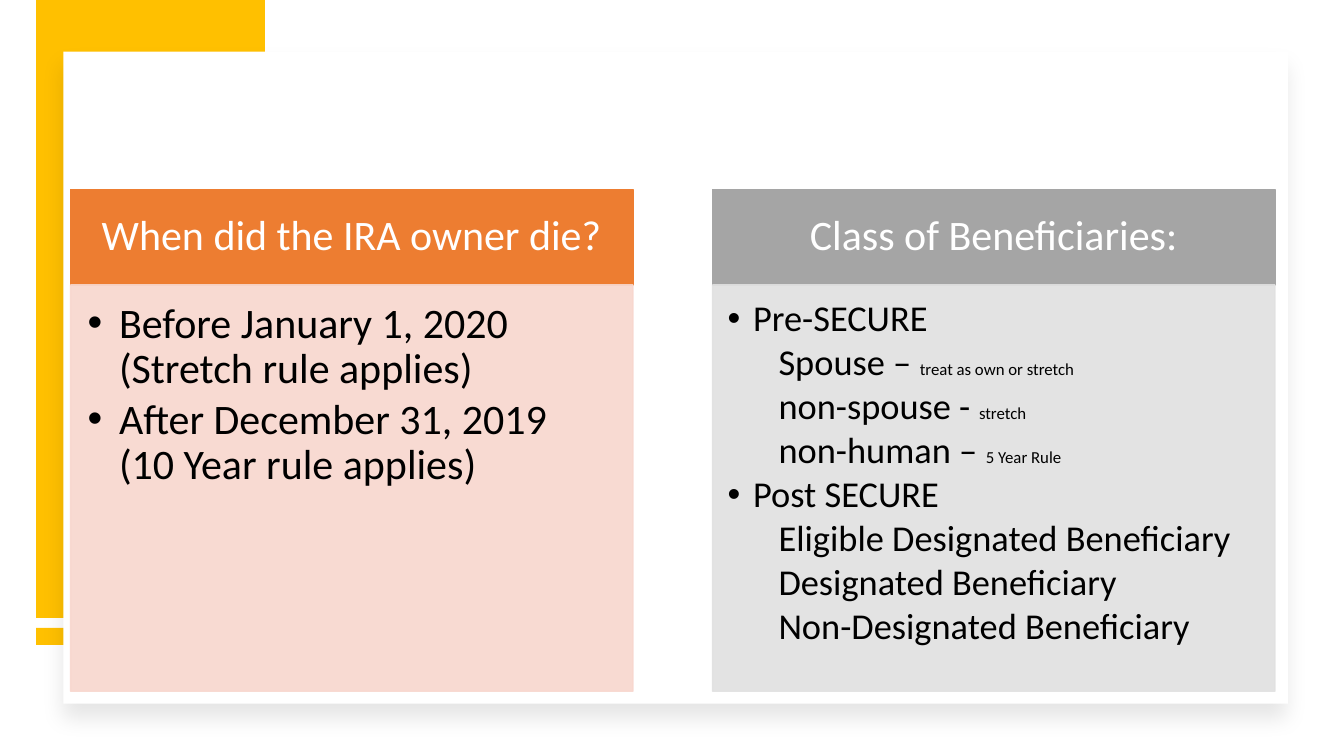
"""Builds the slide on inherited IRA rules and classes of beneficiaries."""
from lxml.etree import SubElement
from pptx import Presentation
from pptx.dml.color import RGBColor
from pptx.enum.shapes import MSO_SHAPE as Shape
from pptx.enum.text import MSO_ANCHOR as Anchor, PP_ALIGN as Align
from pptx.oxml.ns import qn
from pptx.util import Cm, Pt

FONT = "Calibri"
YELLOW, WHITE, BLACK = "FFC000", "FFFFFF", "000000"
ACCENTS = [(0.91, 15.82, 5.77, 0.43), (0.91, 0, 5.77, 15.57)]
CARD = (1.6, 1.3, 30.86, 16.43)
COLUMNS = [
    {
        "heading": "When did the IRA owner die?", "dark": "ED7D31", "light": "F8D7CE",
        "size": 30, "hang": 0.79, "insets": (0.43, 0.43, 0.58, 0.66),
        "items": [
            (1, "Before January 1, 2020 (Stretch rule applies)", ""),
            (1, "After December 31, 2019 (10 Year rule applies)", ""),
        ],
    },
    {
        "heading": "Class of Beneficiaries:", "dark": "A5A5A5", "light": "E1E1E1",
        "size": 26, "hang": 0.64, "insets": (0.38, 0.38, 0.51, 0.58),
        "items": [
            (1, "Pre-SECURE", ""),
            (2, "Spouse – ", "treat as own or stretch"),
            (2, "non-spouse - ", "stretch"),
            (2, "non-human – ", "5 Year Rule"),
            (1, "Post SECURE", ""),
            (2, "Eligible Designated Beneficiary", ""),
            (2, "Designated Beneficiary", ""),
            (2, "Non-Designated Beneficiary", ""),
        ],
    },
]
COLUMN_LEFT, COLUMN_PITCH, COLUMN_WIDTH = 1.78, 16.18, 14.17
HEADING_TOP, HEADING_HEIGHT, BODY_HEIGHT = 4.78, 2.4, 10.24
HEADING_INSETS = (0.58, 0.33, 0.58, 0.33)
HEADING_SIZE, NOTE_SIZE = 30, 12


def color(hex_code):
    return RGBColor.from_string(hex_code)


def add_box(slide, place, fill, outlined=False, opacity=100):
    box = slide.shapes.add_shape(Shape.RECTANGLE, *map(Cm, place))
    box.shadow.inherit = False
    box.fill.solid()
    box.fill.fore_color.rgb = color(fill)
    if outlined:
        box.line.color.rgb = color(fill)
        box.line.width = Pt(1)
    else:
        box.line.fill.background()
    if opacity < 100:
        for tint in list(box._element.spPr.iter(qn("a:srgbClr"))):
            SubElement(tint, qn("a:alpha"), val=str(opacity * 1000))
    return box


def add_shadow(box):
    effects = box._element.spPr.find(qn("a:effectLst"))
    shadow = SubElement(effects, qn("a:outerShdw"), blurRad=str(Pt(15)), dist=str(Pt(11)),
                        dir="5400000", algn="t", rotWithShape="0")
    tint = SubElement(shadow, qn("a:srgbClr"), val=BLACK)
    SubElement(tint, qn("a:alpha"), val="10000")


def set_frame(box, insets, anchor):
    frame = box.text_frame
    frame.word_wrap = True
    frame.vertical_anchor = anchor
    (frame.margin_left, frame.margin_top,
     frame.margin_right, frame.margin_bottom) = map(Cm, insets)
    return frame


def add_text(paragraph, text, size, ink):
    run = paragraph.add_run()
    run.text = text
    run.font.name = FONT
    run.font.size = Pt(size)
    run.font.color.rgb = color(ink)


def format_item(paragraph, level, size, hang):
    paragraph.alignment = Align.LEFT
    paragraph.line_spacing = 0.9
    paragraph.space_after = Pt(round(size * 0.13, 1))
    settings = paragraph._p.get_or_add_pPr()
    settings.set("marL", str(Cm(hang * level)))
    if level == 1:
        settings.set("indent", str(-Cm(hang)))
        SubElement(settings, qn("a:buFont"), typeface="Arial")
        SubElement(settings, qn("a:buChar"), char="•")


def add_column(slide, left, column):
    heading_box = add_box(slide, (left, HEADING_TOP, COLUMN_WIDTH, HEADING_HEIGHT),
                          column["dark"], outlined=True)
    heading = set_frame(heading_box, HEADING_INSETS, Anchor.MIDDLE).paragraphs[0]
    heading.alignment = Align.CENTER
    heading.line_spacing = 0.9
    add_text(heading, column["heading"], size=HEADING_SIZE, ink=WHITE)

    body_place = (left, HEADING_TOP + HEADING_HEIGHT, COLUMN_WIDTH, BODY_HEIGHT)
    body_box = add_box(slide, body_place, column["light"], outlined=True, opacity=90)
    body = set_frame(body_box, column["insets"], Anchor.TOP)
    for index, (level, item, note) in enumerate(column["items"]):
        paragraph = body.add_paragraph() if index else body.paragraphs[0]
        format_item(paragraph, level, column["size"], column["hang"])
        add_text(paragraph, item, size=column["size"], ink=BLACK)
        if note:
            add_text(paragraph, note, size=NOTE_SIZE, ink=BLACK)


def main():
    deck = Presentation()
    deck.slide_width, deck.slide_height = Cm(33.87), Cm(19.05)
    slide = deck.slides.add_slide(deck.slide_layouts[6])
    for accent in ACCENTS:
        add_box(slide, accent, YELLOW)
    add_shadow(add_box(slide, CARD, WHITE))
    for index, column in enumerate(COLUMNS):
        add_column(slide, COLUMN_LEFT + index * COLUMN_PITCH, column)
    deck.save("out.pptx")


if __name__ == "__main__":
    main()
